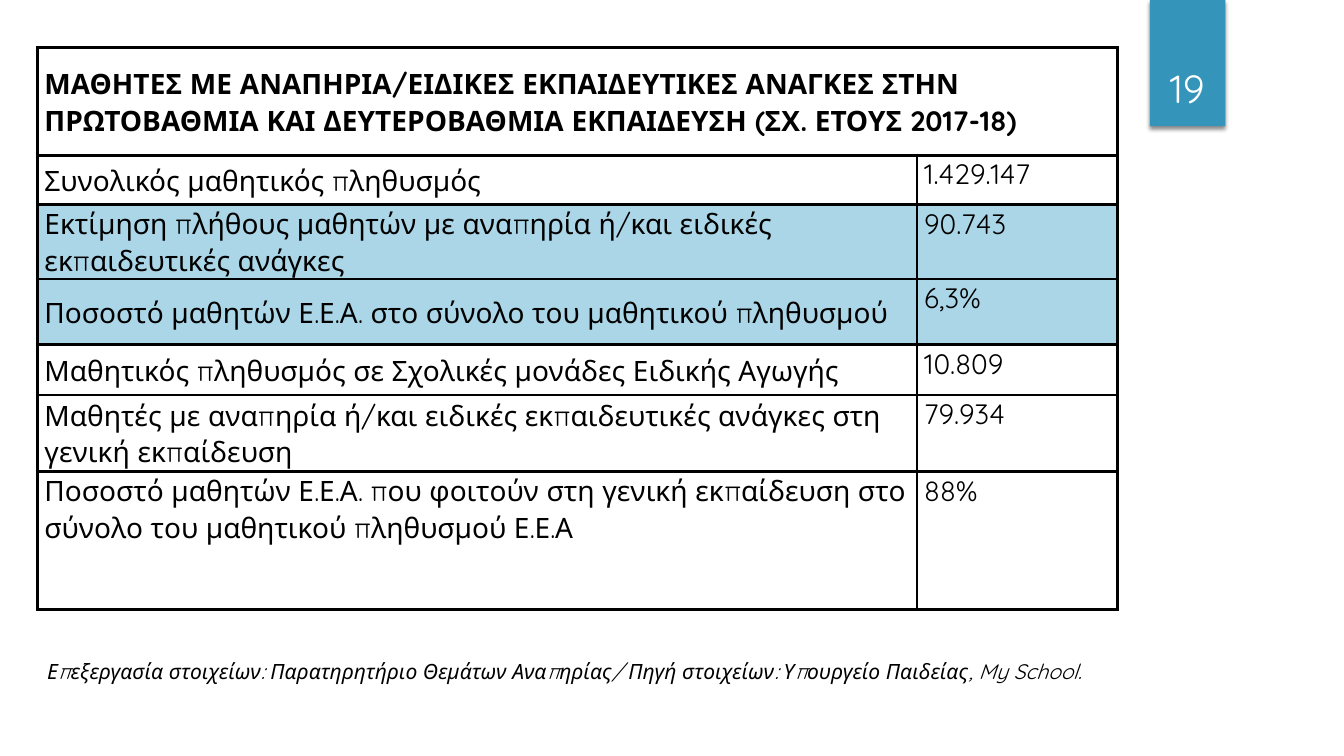
from lxml import etree
from pptx import Presentation
from pptx.dml.color import RGBColor
from pptx.enum.shapes import MSO_SHAPE
from pptx.enum.text import MSO_ANCHOR, MSO_AUTO_SIZE, PP_ALIGN
from pptx.oxml import parse_xml
from pptx.oxml.ns import nsdecls, qn
from pptx.util import Cm, Pt

RECTANGLE = MSO_SHAPE.RECTANGLE
TOP, MIDDLE, BOTTOM = MSO_ANCHOR.TOP, MSO_ANCHOR.MIDDLE, MSO_ANCHOR.BOTTOM
LEFT, CENTER, JUSTIFY = PP_ALIGN.LEFT, PP_ALIGN.CENTER, PP_ALIGN.JUSTIFY
FIT_SHAPE = MSO_AUTO_SIZE.SHAPE_TO_FIT_TEXT

FONT = "Quicksand"
BLACK = RGBColor(0x00, 0x00, 0x00)
WHITE = RGBColor(0xFF, 0xFF, 0xFF)
TEAL = RGBColor(0x34, 0x94, 0xBA)
PALE_BLUE = RGBColor(0xAA, 0xD6, 0xE7)

HEADING = ("ΜΑΘΗΤΕΣ ΜΕ ΑΝΑΠΗΡΙΑ/ΕΙΔΙΚΕΣ ΕΚΠΑΙΔΕΥΤΙΚΕΣ ΑΝΑΓΚΕΣ ΣΤΗΝ "
           "ΠΡΩΤΟΒΑΘΜΙΑ ΚΑΙ ΔΕΥΤΕΡΟΒΑΘΜΙΑ ΕΚΠΑΙΔΕΥΣΗ (ΣΧ. ΕΤΟΥΣ 2017-18)")
STATISTICS = [
    ("Συνολικός μαθητικός πληθυσμός", "1.429.147", None, MIDDLE),
    ("Εκτίμηση πλήθους μαθητών με αναπηρία ή/και ειδικές εκπαιδευτικές ανάγκες",
     "90.743", PALE_BLUE, MIDDLE),
    ("Ποσοστό μαθητών Ε.Ε.Α. στο σύνολο του μαθητικού πληθυσμού",
     "6,3%", PALE_BLUE, MIDDLE),
    ("Μαθητικός πληθυσμός σε Σχολικές μονάδες Ειδικής Αγωγής",
     "10.809", None, MIDDLE),
    ("Μαθητές με αναπηρία ή/και ειδικές εκπαιδευτικές ανάγκες στη γενική εκπαίδευση",
     "79.934", None, MIDDLE),
    ("Ποσοστό μαθητών Ε.Ε.Α. που φοιτούν στη γενική εκπαίδευση στο σύνολο του "
     "μαθητικού πληθυσμού Ε.Ε.Α", "88%", None, TOP),
]
COLUMN_WIDTHS = [22.17, 5.05]
ROW_HEIGHTS = [2.72, 1.24, 1.88, 1.65, 1.27, 1.93, 3.48]
SOURCE_NOTE = ("Επεξεργασία στοιχείων: Παρατηρητήριο Θεμάτων Αναπηρίας/ "
               "Πηγή στοιχείων: Υπουργείο Παιδείας, My School.")


def write_text(frame, text, size, color, align=LEFT, bold=False, italic=False):
    """Fill the first paragraph of a frame and return it."""
    para = frame.paragraphs[0]
    para.text = text
    para.alignment = align
    font = para.font
    font.name, font.size = FONT, Pt(size)
    font.bold, font.italic = bold, italic
    font.color.rgb = color
    return para


def add_text(slide, left, top, width, height, text, size, color, **style):
    """Add a text box with one paragraph and return its frame."""
    box = slide.shapes.add_textbox(Cm(left), Cm(top), Cm(width), Cm(height))
    write_text(box.text_frame, text, size, color, **style)
    return box.text_frame


def add_page_tab(slide):
    """Add the coloured page tab with its soft shadow and number."""
    tab = slide.shapes.add_shape(RECTANGLE, Cm(28.98), Cm(0), Cm(1.9), Cm(3.18))
    tab.shadow.inherit = False
    tab.fill.solid()
    tab.fill.fore_color.rgb = TEAL
    tab.line.fill.background()
    effects = tab.element.spPr.find(qn("a:effectLst"))
    effects.append(parse_xml(
        f'<a:outerShdw {nsdecls("a")} blurRad="{Pt(3)}" dist="{Pt(2)}" dir="5400000">'
        '<a:srgbClr val="000000"><a:alpha val="45000"/></a:srgbClr></a:outerShdw>'))
    frame = add_text(slide, 28.75, 0.81, 2.34, 2.13, "19", 28, WHITE, align=CENTER)
    frame.word_wrap = True
    frame.vertical_anchor = BOTTOM


def set_borders(cell):
    """Draw a black line on every side of a cell."""
    properties = cell._tc.get_or_add_tcPr()
    for index, side in enumerate(("lnL", "lnR", "lnT", "lnB")):
        line = etree.Element(qn(f"a:{side}"), w=str(Pt(2.25)))
        fill = etree.SubElement(line, qn("a:solidFill"))
        etree.SubElement(fill, qn("a:srgbClr"), val=str(BLACK))
        properties.insert(index, line)


def fill_cell(cell, text, color, anchor=TOP, **style):
    """Write and format one table cell."""
    cell.margin_left = cell.margin_right = Cm(0.18)
    cell.margin_top = cell.margin_bottom = Cm(0)
    cell.vertical_anchor = anchor
    para = write_text(cell.text_frame, text, 20, BLACK, **style)
    para.line_spacing = 1.05
    para.space_after = Pt(6)
    if color is None:
        cell.fill.background()
    else:
        cell.fill.solid()
        cell.fill.fore_color.rgb = color


def add_statistics_table(slide):
    """Add the table with a merged heading row and the statistics."""
    table = slide.shapes.add_table(
        len(ROW_HEIGHTS), len(COLUMN_WIDTHS), Cm(0.94), Cm(1.19),
        Cm(sum(COLUMN_WIDTHS)), Cm(sum(ROW_HEIGHTS))).table
    table.horz_banding = False
    for column, width in zip(table.columns, COLUMN_WIDTHS):
        column.width = Cm(width)
    for row, height in zip(table.rows, ROW_HEIGHTS):
        row.height = Cm(height)
    table.cell(0, 0).merge(table.cell(0, 1))
    fill_cell(table.cell(0, 0), HEADING, WHITE, MIDDLE, bold=True)
    for index, (label, value, color, anchor) in enumerate(STATISTICS, start=1):
        fill_cell(table.cell(index, 0), label, color, anchor)
        fill_cell(table.cell(index, 1), value, color, align=JUSTIFY)
    for cell in table.iter_cells():
        set_borders(cell)


def main():
    """Build the slide and save the deck."""
    deck = Presentation()
    deck.slide_width, deck.slide_height = Cm(33.87), Cm(19.05)
    slide = deck.slides.add_slide(deck.slide_layouts[6])
    add_page_tab(slide)
    add_statistics_table(slide)
    note = add_text(slide, 0.94, 16.46, 28.93, 0.89, SOURCE_NOTE, 15, BLACK, italic=True)
    note.word_wrap = False
    note.auto_size = FIT_SHAPE
    deck.save("out.pptx")


if __name__ == "__main__":
    main()
